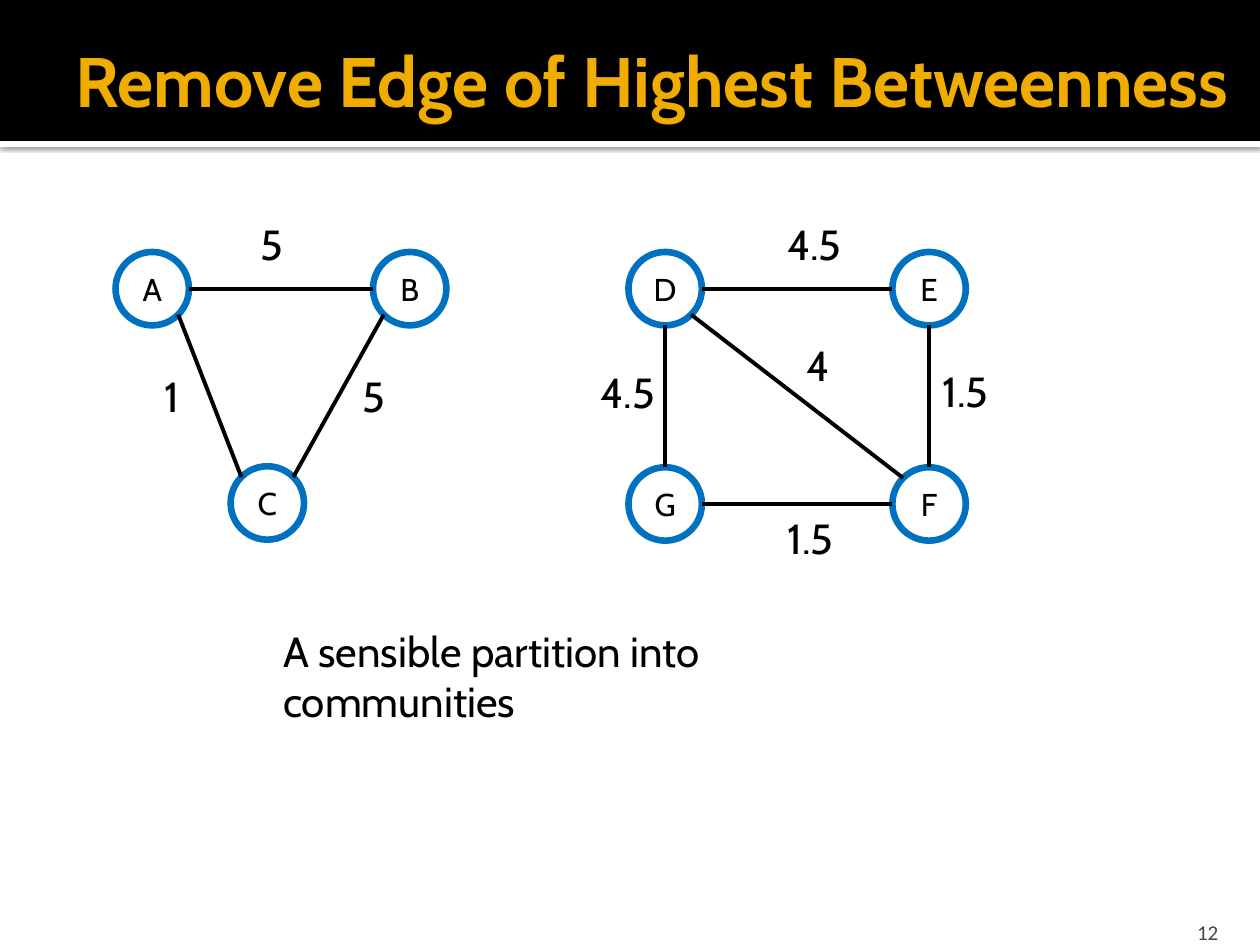
from dataclasses import dataclass
from math import sqrt

from lxml.etree import SubElement
from pptx import Presentation
from pptx.dml.color import RGBColor as RGB
from pptx.enum.shapes import MSO_CONNECTOR as Link, MSO_SHAPE as Form
from pptx.enum.text import MSO_ANCHOR as Anchor, MSO_AUTO_SIZE as Fit, PP_ALIGN as Align
from pptx.oxml.ns import qn
from pptx.util import Cm, Pt


@dataclass(frozen=True)
class Theme:
    black: RGB = RGB(0, 0, 0)
    white: RGB = RGB(255, 255, 255)
    gold: RGB = RGB(0xF0, 0xAD, 0x00)
    blue: RGB = RGB(0x00, 0x70, 0xC0)
    gray: RGB = RGB(0x45, 0x45, 0x45)
    font: str = "Cabin"
    plain: str = "Calibri"
    head: int = 40
    body: int = 24
    name: int = 18
    page: int = 12
    ring: float = 3.78
    edge: float = 2.25


SIZE = 1.48  # node diameter, cm
DIAG = 1 / sqrt(2)
PORTS = {
    "n": (0, -1), "e": (1, 0), "s": (0, 1), "w": (-1, 0),
    "nw": (-DIAG, -DIAG), "ne": (DIAG, -DIAG),
    "sw": (-DIAG, DIAG), "se": (DIAG, DIAG),
}

# Node centres, cm
NODES = {
    "A": (3.07, 5.82), "B": (8.26, 5.82), "C": (5.39, 10.14),
    "D": (13.41, 5.82), "E": (18.73, 5.82),
    "F": (18.73, 10.16), "G": (13.41, 10.16),
}

# Start node and port, end node and port, betweenness, label left and top
EDGES = [
    ("A", "e", "B", "w", "5", 5.0, 4.27),
    ("A", "se", "C", "nw", "1", 3.07, 7.34),
    ("C", "ne", "B", "sw", "5", 7.06, 7.34),
    ("D", "e", "E", "w", "4.5", 15.62, 4.27),
    ("D", "s", "G", "n", "4.5", 11.86, 7.26),
    ("E", "s", "F", "n", "1.5", 18.75, 7.24),
    ("G", "e", "F", "w", "1.5", 15.62, 10.21),
    ("D", "se", "F", "nw", "4", 16.0, 6.71),
]


class Deck:
    def __init__(self, theme):
        self.theme = theme
        self.prs = Presentation()
        self.prs.slide_width, self.prs.slide_height = Cm(25.4), Cm(19.05)
        self.slide = self.prs.slides.add_slide(self.prs.slide_layouts[6])

    def style(self, frame, text, size, color=None, font=None, bold=False, align=Align.LEFT):
        frame.text = text
        par = frame.paragraphs[0]
        par.alignment = align
        face = par.runs[0].font
        face.name, face.size, face.bold = font or self.theme.font, Pt(size), bold
        face.color.rgb = color or self.theme.black

    def band(self, top, height, color):
        """Add a full-width bar."""
        bar = self.slide.shapes.add_shape(
            Form.RECTANGLE, 0, Cm(top), self.prs.slide_width, Cm(height))
        bar.shadow.inherit = False
        bar.fill.solid()
        bar.fill.fore_color.rgb = color
        bar.line.fill.background()
        return bar

    def shade(self, shape):
        """Cast a soft shadow straight down."""
        effects = shape._element.spPr.find(qn("a:effectLst"))
        cast = SubElement(effects, qn("a:outerShdw"), blurRad=str(Pt(2.5)),
                          dist=str(Pt(0.8)), dir="5400000", algn="tl", rotWithShape="0")
        tint = SubElement(cast, qn("a:srgbClr"), val=str(self.theme.black))
        SubElement(tint, qn("a:alpha"), val="60000")

    def text(self, text, box, size, wrap=True, anchor=Anchor.TOP, pads=(0.25, 0.13, 0.25, 0.13), **look):
        frame = self.slide.shapes.add_textbox(*map(Cm, box)).text_frame
        frame.word_wrap = wrap
        frame.auto_size = Fit.NONE if wrap else Fit.SHAPE_TO_FIT_TEXT
        frame.vertical_anchor = anchor
        (frame.margin_left, frame.margin_top,
         frame.margin_right, frame.margin_bottom) = map(Cm, pads)
        self.style(frame, text, size, **look)

    def node(self, name, x, y):
        ring = self.slide.shapes.add_shape(
            Form.OVAL, Cm(x - SIZE / 2), Cm(y - SIZE / 2), Cm(SIZE), Cm(SIZE))
        ring.shadow.inherit = False
        ring.fill.background()
        ring.line.color.rgb = self.theme.blue
        ring.line.width = Pt(self.theme.ring)
        frame = ring.text_frame
        frame.margin_left = frame.margin_right = 0
        frame.vertical_anchor = Anchor.MIDDLE
        self.style(frame, name, self.theme.name, align=Align.CENTER)

    def edge(self, start, end):
        line = self.slide.shapes.add_connector(Link.STRAIGHT, *map(Cm, start + end))
        line.line.color.rgb = self.theme.black
        line.line.width = Pt(self.theme.edge)
        SubElement(line._element.spPr, qn("a:effectLst"))


def rim(name, port):
    """Return the point on a node's circle at a compass port."""
    (x, y), (dx, dy) = NODES[name], PORTS[port]
    return x + dx * SIZE / 2, y + dy * SIZE / 2


def main():
    theme = Theme()
    deck = Deck(theme)
    deck.shade(deck.band(2.84, 0.13, theme.white))
    deck.band(0, 2.84, theme.black)
    deck.text("Remove Edge of Highest Betweenness", (1.27, 0.43, 24.13, 2.34), theme.head,
              anchor=Anchor.MIDDLE, pads=(0.25, 0.13, 0.13, 0.13),
              color=theme.gold, bold=True)
    deck.text("12", (22.78, 18.29, 2.03, 0.76), theme.page, anchor=Anchor.BOTTOM,
              pads=(0.25, 0.13, 0.25, 0), color=theme.gray, font=theme.plain,
              align=Align.RIGHT)

    for name, spot in NODES.items():
        deck.node(name, *spot)
    for first, out, last, into, score, left, top in EDGES:
        deck.edge(rim(first, out), rim(last, into))
        width = 1.6 if "." in score else 0.92
        deck.text(score, (left, top, width, 1.27), theme.body, wrap=False)

    deck.text("A sensible partition into communities", (5.46, 12.47, 13.4, 1.27), theme.body)
    deck.prs.save("out.pptx")


if __name__ == "__main__":
    main()
